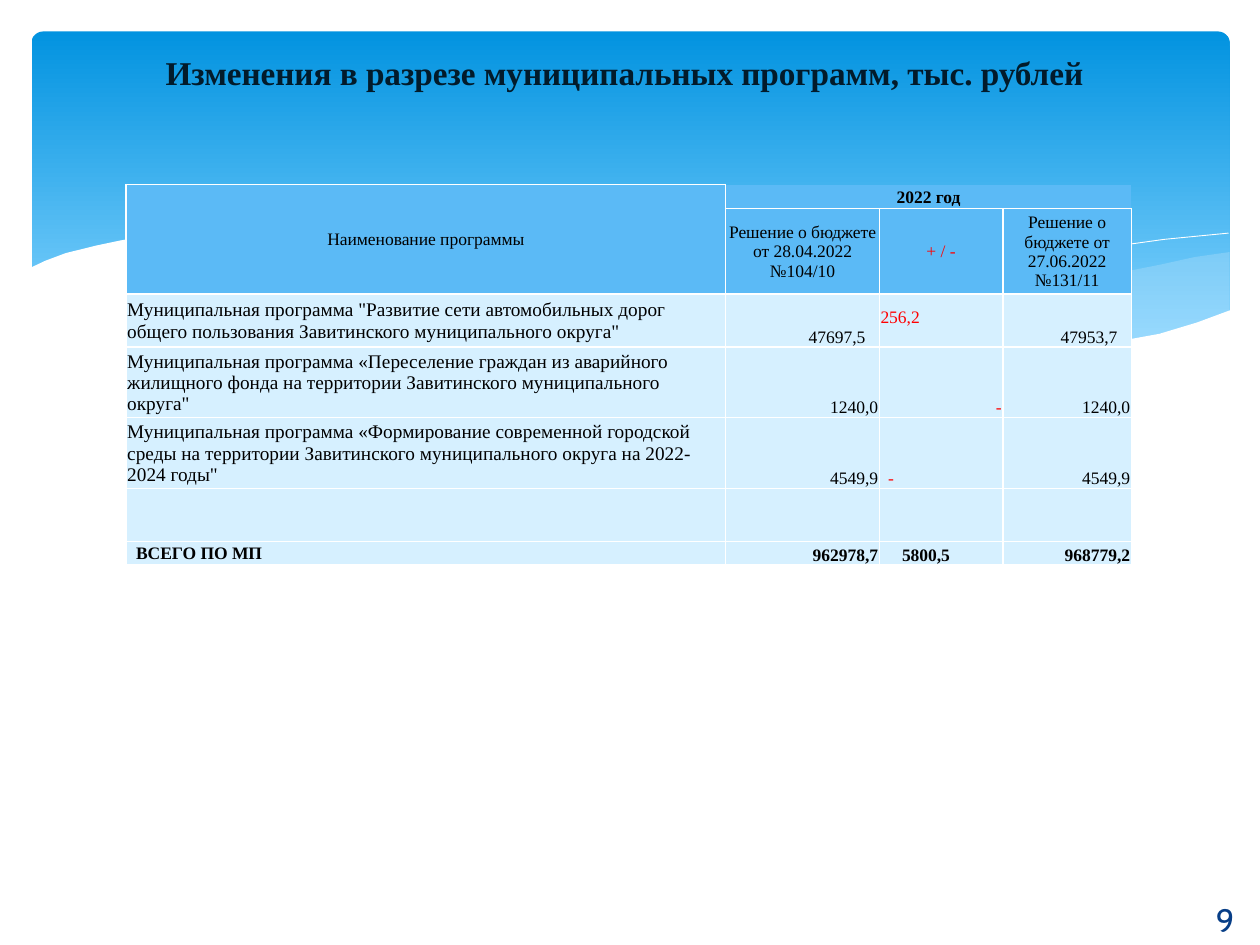
from lxml import etree
from pptx import Presentation
from pptx import util as u
from pptx.dml.color import RGBColor
from pptx.enum import shapes, text
from pptx.oxml import ns

COLORS = {
    "banner_top": "0293E0", "banner_bottom": "83D3FE", "wave": "C6E7FC",
    "white": "FFFFFF", "title": "021B2B", "number": "073E87",
    "header": "5BBAF6", "body": "D6F0FF", "black": "000000", "red": "FF0000",
}
FONT = "Times New Roman"
TITLE = "Изменения в разрезе муниципальных программ, тыс. рублей"
PAGE_NUMBER = "9"

# Table content
NAME_HEADER = "Наименование программы"
YEAR_HEADER = "2022 год"
DETAIL_HEADERS = ["Решение о бюджете от 28.04.2022 №104/10", "+ / -",
                  "Решение о бюджете от 27.06.2022 №131/11"]
ROWS = [
    ['Муниципальная программа "Развитие сети автомобильных дорог общего пользования '
     'Завитинского муниципального округа"', "47697,5", "256,2", "47953,7"],
    ['Муниципальная программа «Переселение граждан из аварийного жилищного фонда на '
     'территории Завитинского муниципального округа"', "1240,0", "-", "1240,0"],
    ['Муниципальная программа «Формирование современной городской среды на территории '
     'Завитинского муниципального округа на 2022-2024 годы"', "4549,9", "-", "4549,9"],
    ["", "", "", ""],
    ["ВСЕГО ПО МП", "962978,7", "5800,5", "968779,2"],
]
COLUMN_WIDTHS = [342.7, 87.8, 70.6, 73.4]
ROW_HEIGHTS = [13.7, 45, 30.3, 37.3, 37.6, 30.3, 13.5]
TABLE_LEFT, TABLE_TOP = 72, 105.5
# Cells set apart from the edge: (body row, column) -> margins in points
LEFT_INDENTS = {(0, 2): 0.72, (2, 2): 5, (4, 0): 5.8, (4, 2): 13}
RIGHT_INDENTS = {(0, 1): 8, (0, 3): 8}
BOTTOM_INDENTS = {(0, 2): 11}

# Wave outlines in points: (fill opacity in percent or None for a line, points)
WAVES = [
    (29, [(702.7, 144), (682.6, 146.9), (663.1, 151.2), (641.5, 155.5), (619.9, 160.6),
          (579.6, 170.6), (542.2, 178.6), (508.3, 185), (475.9, 190.8), (497.5, 193.7),
          (527, 197.3), (553.7, 199.4), (578.2, 200.2), (601.2, 199.4), (621.4, 198),
          (645.8, 194.4), (668.2, 189.4), (683.3, 185), (702.7, 177.8)]),
    (40, [(643, 196.6), (602.6, 190.8), (558, 182.9), (508.3, 172.8), (452.9, 159.8),
          (420.5, 151.9), (389.5, 146.2), (352.1, 139.7), (318.2, 136.1), (287.3, 133.9),
          (259.9, 133.2), (236.2, 134.6), (205.9, 137.5), (246.2, 143.3), (290.9, 151.9),
          (323.3, 159.8), (381.6, 172.8), (432.7, 183.6), (478.8, 191.5), (519.8, 197.3),
          (556.6, 199.4), (589, 200.2), (617, 199.4)]),
    (None, [(222.5, 140.4), (247.7, 136.8), (278.6, 134.6), (311.8, 134.6), (352.1, 136.8),
            (400.3, 141.8), (437.8, 146.9), (478.8, 153.4), (523.4, 162.7), (572.4, 173.5),
            (625.7, 187.9), (653, 195.8)]),
    (None, [(441.4, 185), (483.8, 173.5), (518.4, 164.9), (558.7, 155.5), (601.9, 146.9),
            (634.3, 141.1), (665.3, 136.8), (702, 133.2)]),
    (100, [(703.4, 177.1), (684, 184.3), (662.4, 190.8), (638.6, 195.1), (612, 198),
           (582.5, 199.4), (547.9, 198), (509.8, 194.4), (466.6, 188.6), (416.9, 180),
           (362.2, 167.8), (321.8, 158.4), (281.5, 149), (244.8, 141.8), (210.2, 136.8),
           (180, 133.9), (151.9, 132.5), (127.4, 132.5), (105.1, 133.2), (85.7, 134.6),
           (68.4, 137.5), (54.7, 140.4), (37.4, 144.7), (25.9, 149), (16.6, 153.4),
           (16.6, 236.9), (703.4, 236.9)]),
]


def rgb(name):
    return RGBColor.from_string(COLORS[name])


def style_font(paragraph, size, color, bold=False, name=FONT):
    font = paragraph.font
    font.name, font.size, font.bold = name, u.Pt(size), bold
    font.color.rgb = rgb(color)


def add_wave(slide, opacity, points):
    tenths = [(round(x * 10), round(y * 10)) for x, y in points]
    builder = slide.shapes.build_freeform(*tenths[0], scale=u.Pt(0.1))
    builder.add_line_segments(tenths[1:], close=opacity is not None)
    wave = builder.convert_to_shape()
    wave.shadow.inherit = False
    if opacity is None:
        wave.fill.background()
        wave.line.color.rgb = rgb("white")
        wave.line.width = u.Pt(0.5)
        return
    wave.line.fill.background()
    wave.fill.solid()
    wave.fill.fore_color.rgb = rgb("white" if opacity == 100 else "wave")
    if opacity < 100:
        color = wave.fill._xPr.find(".//" + ns.qn("a:srgbClr"))
        etree.SubElement(color, ns.qn("a:alpha"), val=str(opacity * 1000))


def set_borders(cell, hidden=()):
    properties = cell._tc.get_or_add_tcPr()
    for index, side in enumerate("LRTB"):
        line = etree.Element(ns.qn("a:ln" + side), w=str(u.Pt(1)))
        if side in hidden:
            etree.SubElement(line, ns.qn("a:noFill"))
        else:
            fill = etree.SubElement(line, ns.qn("a:solidFill"))
            etree.SubElement(fill, ns.qn("a:srgbClr"), val=COLORS["white"])
        properties.insert(index, line)


def fill_cell(cell, words, fill, size=10, color="black", bold=False,
              align=text.PP_ALIGN.CENTER, anchor=text.MSO_ANCHOR.MIDDLE,
              left=0.72, right=0.72, bottom=0):
    cell.text = words
    cell.fill.solid()
    cell.fill.fore_color.rgb = rgb(fill)
    cell.margin_left, cell.margin_right = u.Pt(left), u.Pt(right)
    cell.margin_top, cell.margin_bottom = u.Pt(0.72), u.Pt(bottom)
    cell.vertical_anchor = anchor
    paragraph = cell.text_frame.paragraphs[0]
    paragraph.alignment = align
    style_font(paragraph, size, color, bold)


def add_program_table(slide):
    table = slide.shapes.add_table(
        len(ROW_HEIGHTS), len(COLUMN_WIDTHS), u.Pt(TABLE_LEFT), u.Pt(TABLE_TOP),
        u.Pt(sum(COLUMN_WIDTHS)), u.Pt(sum(ROW_HEIGHTS))).table
    table.first_row = table.horz_banding = False
    for column, width in zip(table.columns, COLUMN_WIDTHS):
        column.width = u.Pt(width)
    for row, height in zip(table.rows, ROW_HEIGHTS):
        row.height = u.Pt(height)

    # Header
    table.cell(0, 0).merge(table.cell(1, 0))
    table.cell(0, 1).merge(table.cell(0, 3))
    fill_cell(table.cell(0, 0), NAME_HEADER, "header")
    fill_cell(table.cell(0, 1), YEAR_HEADER, "header", bold=True)
    for column, words in enumerate(DETAIL_HEADERS, 1):
        fill_cell(table.cell(1, column), words, "header",
                  color="red" if column == 2 else "black")

    # Programs and total
    for row, values in enumerate(ROWS):
        total = row == len(ROWS) - 1
        for column, words in enumerate(values):
            key = (row, column)
            is_left = column == 0 or key in LEFT_INDENTS
            fill_cell(
                table.cell(row + 2, column), words, "body",
                size=11 if column == 0 and words and not total else 10,
                color="red" if column == 2 and not total else "black", bold=total,
                align=text.PP_ALIGN.LEFT if is_left else text.PP_ALIGN.RIGHT,
                anchor=text.MSO_ANCHOR.MIDDLE if column == 0 else text.MSO_ANCHOR.BOTTOM,
                left=LEFT_INDENTS.get(key, 0.72), right=RIGHT_INDENTS.get(key, 0.72),
                bottom=BOTTOM_INDENTS.get(key, 0))

    for row in range(len(ROW_HEIGHTS)):
        for column in range(len(COLUMN_WIDTHS)):
            set_borders(table.cell(row, column), "TR" if row == 0 and column else "")


def main():
    presentation = Presentation()
    presentation.slide_width, presentation.slide_height = u.Pt(720), u.Pt(540)
    slide = presentation.slides.add_slide(presentation.slide_layouts[5])

    # Banner with waves
    banner = slide.shapes.add_shape(shapes.MSO_SHAPE.ROUNDED_RECTANGLE,
                                    u.Pt(18), u.Pt(18), u.Pt(684.7), u.Pt(194.4))
    banner.adjustments[0] = 0.034
    banner.shadow.inherit = False
    banner.line.fill.background()
    banner.fill.gradient()
    banner.fill.gradient_angle = 270
    for stop, position, color in zip(banner.fill.gradient_stops, (0, 0.9),
                                     ("banner_top", "banner_bottom")):
        stop.position, stop.color.rgb = position, rgb(color)
    for opacity, points in WAVES:
        add_wave(slide, opacity, points)

    # Title, brought in front of the banner
    title = slide.shapes.title
    slide.shapes._spTree.append(title._element)
    title.left, title.top, title.width, title.height = u.Pt(0), u.Pt(26), u.Pt(714), u.Pt(45)
    title.text_frame.text = TITLE
    title.text_frame.vertical_anchor = text.MSO_ANCHOR.TOP
    paragraph = title.text_frame.paragraphs[0]
    paragraph.alignment = text.PP_ALIGN.CENTER
    paragraph.space_before = u.Pt(3.8)
    style_font(paragraph, 19, "title", bold=True)

    # Page number
    number = slide.shapes.add_textbox(u.Pt(677.5), u.Pt(511), u.Pt(45), u.Pt(29))
    number.text_frame.word_wrap = True
    number.text_frame.vertical_anchor = text.MSO_ANCHOR.MIDDLE
    number.text_frame.text = PAGE_NUMBER
    paragraph = number.text_frame.paragraphs[0]
    paragraph.alignment = text.PP_ALIGN.CENTER
    style_font(paragraph, 18.5, "number", name="Cabin")

    add_program_table(slide)
    presentation.save("out.pptx")


if __name__ == "__main__":
    main()
